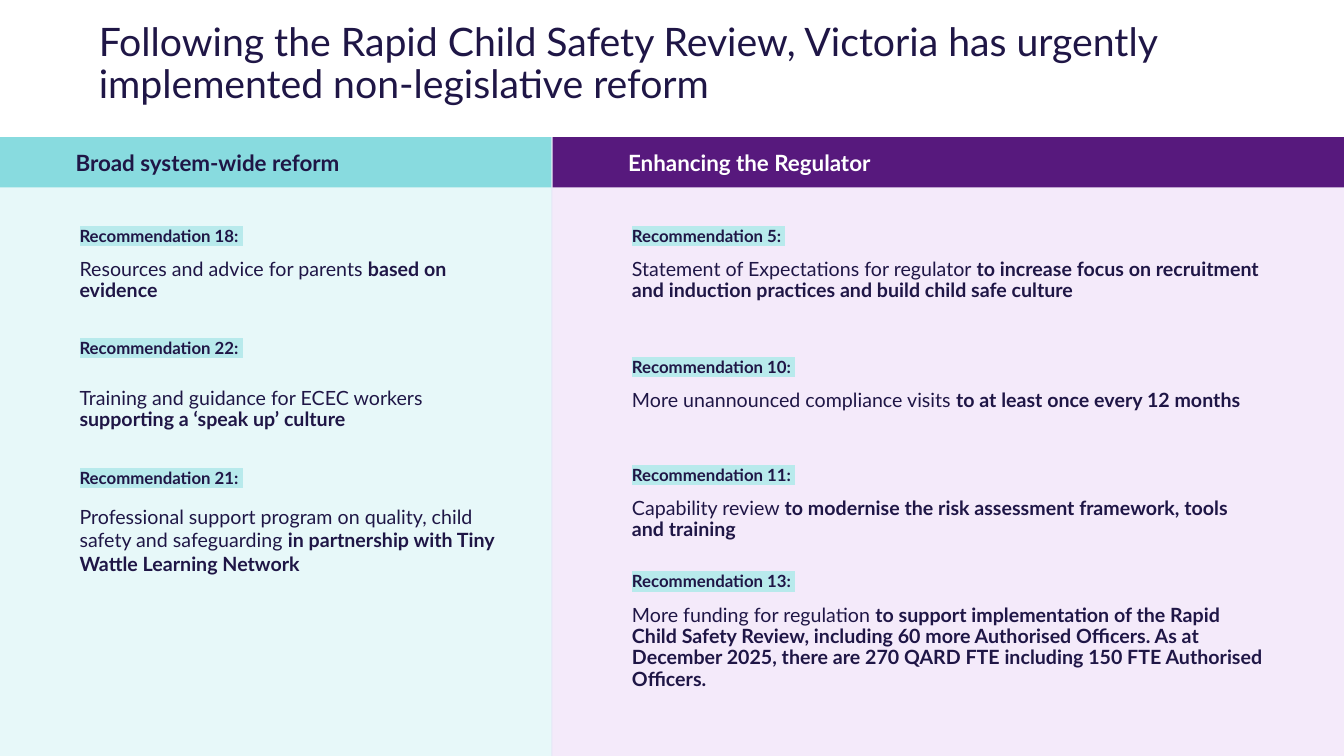
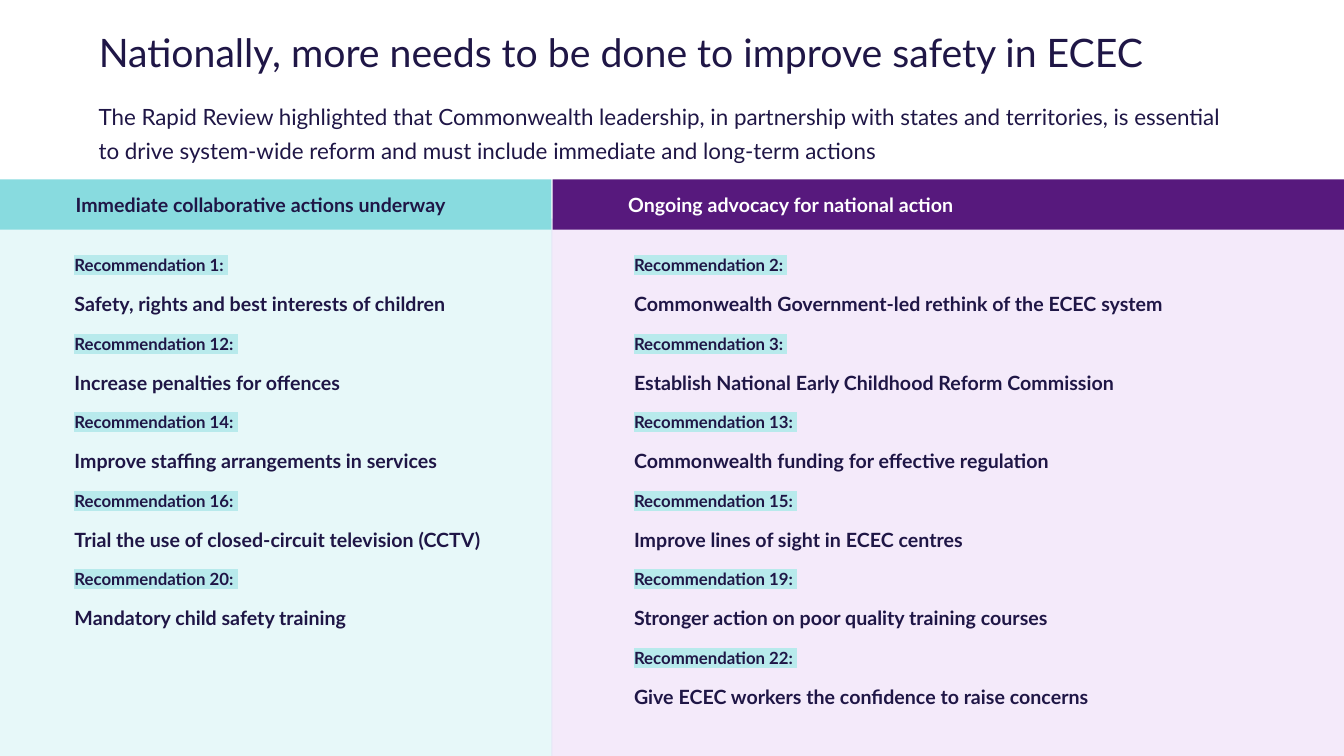
from pptx import Presentation
from pptx.dml.color import RGBColor
from pptx.enum.shapes import MSO_SHAPE
from pptx.enum.text import MSO_ANCHOR, MSO_AUTO_SIZE, PP_ALIGN
from pptx.oxml.ns import qn
from pptx.util import Emu, Pt
from lxml.etree import SubElement

# Shared look: 100 px to the inch
PX = 9144
SLIDE_WIDTH, SLIDE_HEIGHT = 1333, 750
FONT = "Lato"
NAVY, WHITE, HIGHLIGHT = "1F1646", "FFFFFF", "B8EAEC"
BAND_HEIGHT = 50
TITLE_LEFT = 88

# Two columns: (left, width) of panel and band, with their colours
COLUMNS = [
    {"panel": (0, 548), "panel_fill": "E7F8F9", "opacity": 100,
     "band": (0, 547), "band_fill": "88DBDF", "band_text": NAVY},
    {"panel": (547, 786), "panel_fill": "E1C3F3", "opacity": 34,
     "band": (548, 785), "band_fill": "57197D", "band_text": WHITE},
]

# Paragraph spacing
TIGHT = {"line_spacing": 0.9, "space_before": Pt(10)}
TIGHT_WITH_GAP = {**TIGHT, "space_after": Pt(12)}
SINGLE_WITH_GAP = {"space_after": Pt(12)}
LIST = {**TIGHT, "space_after": Pt(4)}
INTRO = {"line_spacing": Pt(24), "space_before": Pt(6), "space_after": Pt(6)}

# Slide 1: (left, width) of the text, then
# (top, height, spacing, number, plain words, bold words)
REFORMS = [
    ((69, 449), [
        (221, 43, TIGHT, 18, "Resources and advice for parents ", "based on evidence"),
        (332, 88, TIGHT_WITH_GAP, 22, "Training and guidance for ECEC workers ",
         "supporting a ‘speak up’ culture"),
        (459, 118, SINGLE_WITH_GAP, 21,
         "Professional support program on quality, child safety and safeguarding ",
         "in partnership with Tiny Wattle Learning Network"),
    ]),
    ((617, 647), [
        (221, 43, TIGHT, 5, "Statement of Expectations for regulator ",
         "to increase focus on recruitment and induction practices and build child safe culture"),
        (351, 43, TIGHT, 10, "More unannounced compliance visits ",
         "to at least once every 12 months"),
        (458, 43, TIGHT, 11, "Capability review ",
         "to modernise the risk assessment framework, tools and training"),
        (564, 43, TIGHT, 13, "More funding for regulation ",
         "to support implementation of the Rapid Child Safety Review, including 60 more "
         "Authorised Officers. As at December 2025, there are 270 QARD FTE including "
         "150 FTE Authorised Officers."),
    ]),
]

# Slide 2: (left, width) of the list, then (number, action)
ACTIONS = [
    ((64, 449), [
        (1, "Safety, rights and best interests of children"),
        (12, "Increase penalties for offences"),
        (14, "Improve staffing arrangements in services"),
        (16, "Trial the use of closed-circuit television (CCTV)"),
        (20, "Mandatory child safety training"),
    ]),
    ((619, 683), [
        (2, "Commonwealth Government-led rethink of the ECEC system"),
        (3, "Establish National Early Childhood Reform Commission"),
        (13, "Commonwealth funding for effective regulation"),
        (15, "Improve lines of sight in ECEC centres"),
        (19, "Stronger action on poor quality training courses"),
        (22, "Give ECEC workers the confidence to raise concerns"),
    ]),
]


def px(*lengths):
    return [Emu(length * PX) for length in lengths]


def color(hex_string):
    return RGBColor.from_string(hex_string)


def set_format(target, values):
    for name, value in values.items():
        setattr(target, name, value)


def add_run(paragraph, text, size, bold=False, text_color=NAVY, highlight=None):
    run = paragraph.add_run()
    run.text = text
    set_format(run.font, {"name": FONT, "size": Pt(size), "bold": bold})
    run.font.color.rgb = color(text_color)
    if highlight:
        properties = run.font._element
        mark = SubElement(properties, qn("a:highlight"))
        SubElement(mark, qn("a:srgbClr"), val=highlight)
        properties.find(qn("a:solidFill")).addnext(mark)


def add_paragraph(frame, spacing):
    """Use the empty first paragraph before adding more."""
    first = frame.paragraphs[0]
    paragraph = frame.add_paragraph() if first.runs else first
    set_format(paragraph, spacing)
    return paragraph


def add_text_box(slide, left, top, width, height):
    frame = slide.shapes.add_textbox(*px(left, top, width, height)).text_frame
    frame.word_wrap = True
    return frame


def add_rectangle(slide, left, top, width, height, fill, opacity=100):
    shape = slide.shapes.add_shape(MSO_SHAPE.RECTANGLE, *px(left, top, width, height))
    shape.shadow.inherit = False
    shape.line.fill.background()
    shape.fill.solid()
    shape.fill.fore_color.rgb = color(fill)
    if opacity < 100:
        fill_color = shape.fill._xPr.find(qn("a:solidFill"))[0]
        SubElement(fill_color, qn("a:alpha"), val=str(opacity * 1000))
    return shape


def add_title(slide, text, height):
    title = slide.shapes.title
    left, top, width, height = px(TITLE_LEFT, 0, SLIDE_WIDTH - TITLE_LEFT, height)
    set_format(title, {"left": left, "top": top, "width": width, "height": height})
    set_format(title.text_frame, {"auto_size": MSO_AUTO_SIZE.NONE, "word_wrap": True,
                                  "vertical_anchor": MSO_ANCHOR.MIDDLE})
    paragraph = add_paragraph(title.text_frame,
                              {"line_spacing": 0.9, "alignment": PP_ALIGN.LEFT})
    add_run(paragraph, text, 28)


def add_columns(slide, panel_top, band_top, headings, size):
    """Tinted panels down to the foot of the slide, then the heading bands."""
    for column in COLUMNS:
        left, width = column["panel"]
        add_rectangle(slide, left, panel_top, width, SLIDE_HEIGHT - panel_top,
                      column["panel_fill"], column["opacity"])
    for column, heading in zip(COLUMNS, headings):
        left, width = column["band"]
        band = add_rectangle(slide, left, band_top, width, BAND_HEIGHT, column["band_fill"])
        set_format(band.text_frame, {"margin_left": px(75)[0], "word_wrap": True,
                                     "vertical_anchor": MSO_ANCHOR.MIDDLE})
        paragraph = add_paragraph(band.text_frame, {"alignment": PP_ALIGN.LEFT})
        add_run(paragraph, heading, size, True, column["band_text"])


def add_recommendation(frame, number, spacing, plain, bold):
    """A highlighted label above its wording."""
    label = add_paragraph(frame, spacing)
    add_run(label, f"Recommendation {number}: ", 12, True, highlight=HIGHLIGHT)
    wording = add_paragraph(frame, spacing)
    if plain:
        add_run(wording, plain, 14)
    add_run(wording, bold, 14, True)


def add_slide(presentation):
    return presentation.slides.add_slide(presentation.slide_layouts.get_by_name("Title Only"))


def build_reform_slide(presentation):
    slide = add_slide(presentation)
    add_title(slide, "Following the Rapid Child Safety Review, Victoria has urgently "
                     "implemented non-legislative reform", 129)
    add_columns(slide, 136, 136, ["Broad system-wide reform", "Enhancing the Regulator"], 16)
    for (left, width), reforms in REFORMS:
        for top, height, spacing, number, plain, bold in reforms:
            frame = add_text_box(slide, left, top, width, height)
            add_recommendation(frame, number, spacing, plain, bold)


def build_national_slide(presentation):
    slide = add_slide(presentation)
    add_title(slide, "Nationally, more needs to be done to improve safety in ECEC", 109)
    add_columns(slide, 217, 178, ["Immediate collaborative actions underway",
                                  "Ongoing advocacy for national action"], 14)
    intro = add_text_box(slide, TITLE_LEFT, 91, 1158, 76)
    add_run(add_paragraph(intro, INTRO),
            "The Rapid Review highlighted that Commonwealth leadership, in partnership with "
            "states and territories, is essential to drive system-wide reform and must "
            "include immediate and long-term actions", 16)
    for (left, width), actions in ACTIONS:
        frame = add_text_box(slide, left, 250, width, 455)
        for number, action in actions:
            add_recommendation(frame, number, LIST, "", action)


def main():
    presentation = Presentation()
    presentation.slide_width, presentation.slide_height = px(SLIDE_WIDTH, SLIDE_HEIGHT)
    build_reform_slide(presentation)
    build_national_slide(presentation)
    presentation.save("out.pptx")


if __name__ == "__main__":
    main()
